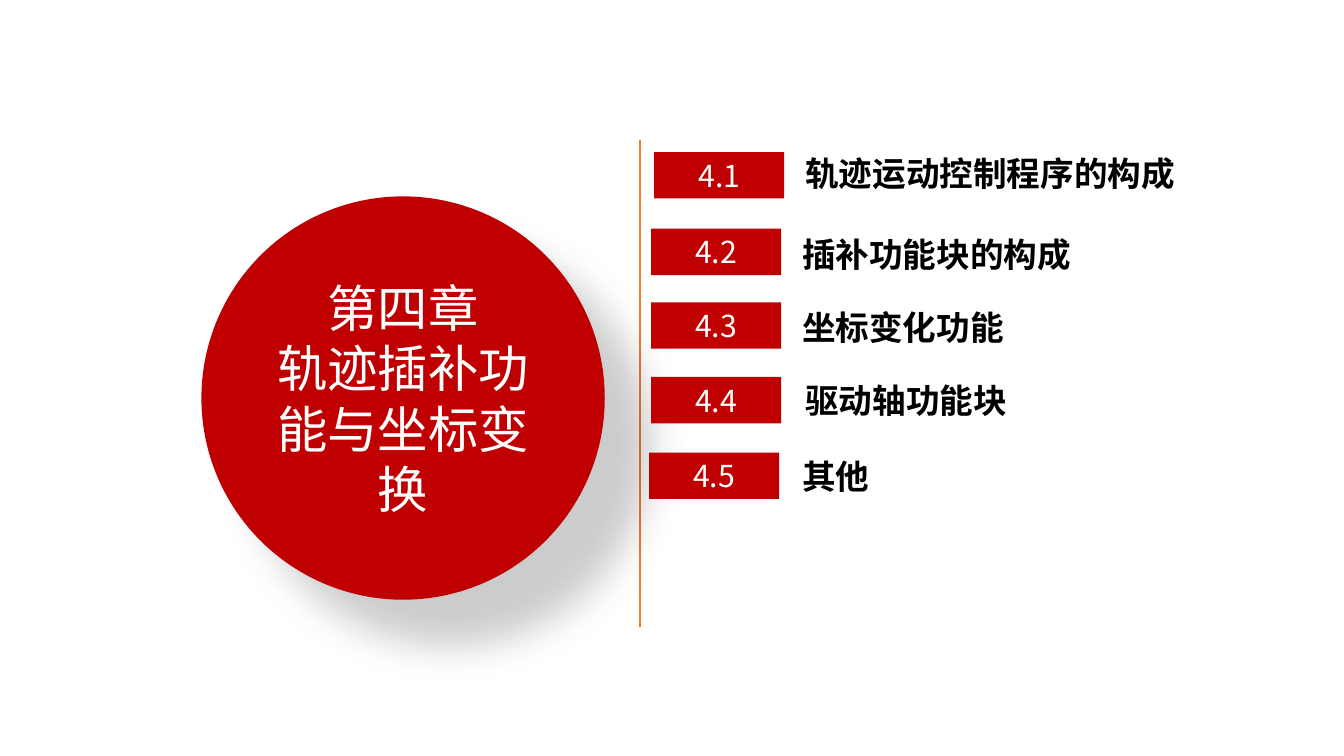
from lxml import etree
from pptx import Presentation
from pptx.dml.color import RGBColor
from pptx.enum.shapes import MSO_CONNECTOR, MSO_SHAPE
from pptx.enum.text import MSO_ANCHOR, PP_ALIGN
from pptx.oxml.ns import qn
from pptx.util import Pt

STRAIGHT = MSO_CONNECTOR.STRAIGHT
RECTANGLE, OVAL = MSO_SHAPE.RECTANGLE, MSO_SHAPE.OVAL
TOP, MIDDLE = MSO_ANCHOR.TOP, MSO_ANCHOR.MIDDLE
LEFT, CENTER = PP_ALIGN.LEFT, PP_ALIGN.CENTER

FONT = "Noto Sans CJK SC"
COLORS = {"red": "C00000", "orange": "ED7D31", "white": "FFFFFF", "black": "000000"}
CHAPTER = ["第四章", "轨迹插补功能与坐标变换"]
SECTIONS = [
    ("4.1", "轨迹运动控制程序的构成", (467.3, 108.7), (568.1, 105.8)),
    ("4.2", "插补功能块的构成", (465.1, 163.4), (565.9, 163.4)),
    ("4.3", "坐标变化功能", (465.1, 216), (565.9, 216)),
    ("4.4", "驱动轴功能块", (465.1, 269.3), (568.1, 267.8)),
    ("4.5", "其他", (463.7, 323.3), (565.9, 321.8)),
]


def color(name):
    """Return the named colour."""
    return RGBColor.from_string(COLORS[name])


def write(shape, lines, size, tint, align=CENTER, anchor=MIDDLE, bold=False):
    """Fill a shape with one paragraph per line of text."""
    frame = shape.text_frame
    frame.vertical_anchor = anchor
    for index, line in enumerate(lines):
        para = frame.add_paragraph() if index else frame.paragraphs[0]
        para.alignment = align
        span = para.add_run()
        span.text = line
        font = span.font
        font.size, font.bold, font.name = Pt(size), bold, FONT
        font.color.rgb = color(tint)
        etree.SubElement(font._element, qn("a:ea"), typeface=FONT)


def add_red_shape(page, kind, left, top, width, height):
    """Add a red shape without outline or shadow."""
    shape = page.shapes.add_shape(kind, Pt(left), Pt(top), Pt(width), Pt(height))
    shape.shadow.inherit = False
    shape.fill.solid()
    shape.fill.fore_color.rgb = color("red")
    shape.line.fill.background()
    return shape


def add_divider(page, left, top, height):
    """Draw the vertical rule between chapter and sections."""
    rule = page.shapes.add_connector(STRAIGHT, Pt(left), Pt(top + height), Pt(left), Pt(top))
    rule.line.color.rgb = color("orange")
    rule.line.width = Pt(1.5)
    etree.SubElement(rule._element.spPr, qn("a:effectLst"))


def add_chapter(page, left, top, size):
    """Draw the chapter circle with its soft shadow."""
    circle = add_red_shape(page, OVAL, left, top, size, size)
    circle.line.color.rgb = color("red")
    circle.line.width = Pt(3)
    effects = circle._element.spPr.find(qn("a:effectLst"))
    shadow = etree.SubElement(effects, qn("a:outerShdw"), blurRad=str(Pt(29)),
                              dist=str(Pt(46)), dir="2700000", algn="tl", rotWithShape="0")
    tint = etree.SubElement(shadow, qn("a:srgbClr"), val=COLORS["black"])
    etree.SubElement(tint, qn("a:alpha"), val="20000")
    frame = circle.text_frame
    frame.word_wrap = True
    frame.margin_left = frame.margin_right = 0
    write(circle, CHAPTER, 36, "white")


def add_section(page, number, title, badge_at, title_at):
    """Place a numbered badge and the section title beside it."""
    label = page.shapes.add_textbox(*map(Pt, title_at), Pt(24 * len(title) + 14.4), Pt(36))
    label.text_frame.word_wrap = False
    write(label, [title], 24, "black", LEFT, TOP, True)
    badge = add_red_shape(page, RECTANGLE, *badge_at, 92.9, 33.1)
    write(badge, [number], 21.6, "white")


def main():
    """Build the chapter contents slide."""
    deck = Presentation()
    deck.slide_width, deck.slide_height = Pt(960), Pt(540)
    page = deck.slides.add_slide(deck.slide_layouts[6])
    add_divider(page, 457.2, 100.1, 347.8)
    add_chapter(page, 145.4, 141.8, 285.1)
    for section in SECTIONS:
        add_section(page, *section)
    deck.save("out.pptx")


if __name__ == "__main__":
    main()
